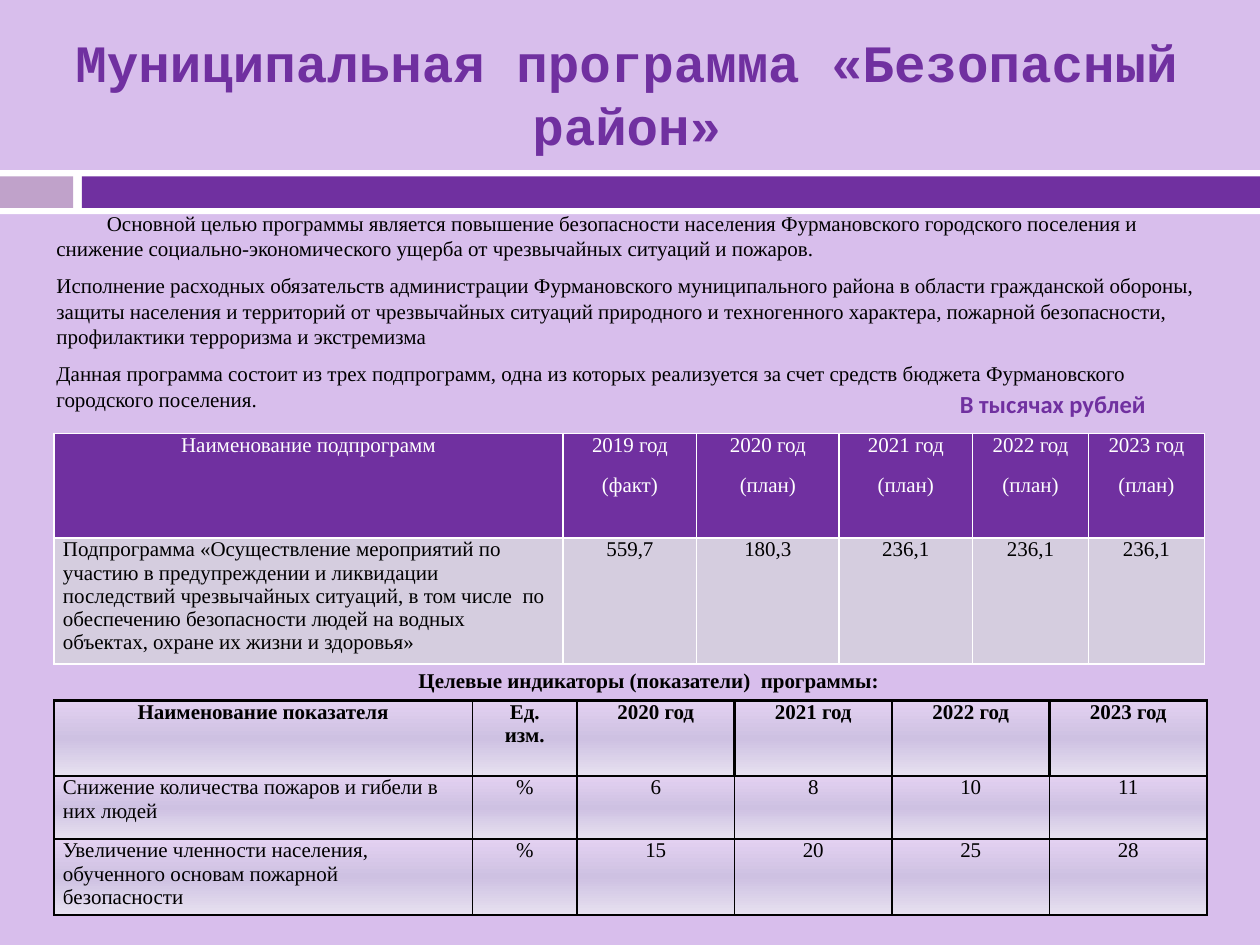
from lxml import etree
from pptx import Presentation
from pptx.dml.color import RGBColor
from pptx.enum.shapes import MSO_SHAPE
from pptx.enum.text import MSO_ANCHOR, PP_ALIGN
from pptx.util import Inches, Pt

RECT = MSO_SHAPE.RECTANGLE
LEFT, MID = PP_ALIGN.LEFT, PP_ALIGN.CENTER
TOP, CENTER = MSO_ANCHOR.TOP, MSO_ANCHOR.MIDDLE
NS = "http://schemas.openxmlformats.org/drawingml/2006/main"
SERIF = "Times New Roman"
PURPLE, WHITE, BLACK = "7030A0", "FFFFFF", "000000"
EDGE, SPAN = 0.43, 9.13

# Content
TITLE = ["Муниципальная программа «Безопасный район»"]
BODY = [
    "Основной целью программы является повышение безопасности населения Фурмановского "
    "городского поселения и снижение социально-экономического ущерба от чрезвычайных "
    "ситуаций и пожаров.",
    "Исполнение расходных обязательств администрации Фурмановского муниципального района "
    "в области гражданской обороны, защиты населения и территорий от чрезвычайных ситуаций "
    "природного и техногенного характера, пожарной безопасности, профилактики терроризма "
    "и экстремизма",
    "Данная программа состоит из трех подпрограмм, одна из которых реализуется за счет "
    "средств бюджета Фурмановского городского поселения.",
]
UNIT = ["В тысячах рублей"]
GOALS = ["Целевые индикаторы (показатели)  программы:"]
COSTS = [
    ["Наименование подпрограмм", "2019 год\n(факт)", "2020 год\n(план)",
     "2021 год\n(план)", "2022 год\n(план)", "2023 год\n(план)"],
    ["Подпрограмма «Осуществление мероприятий по участию в предупреждении и ликвидации "
     "последствий чрезвычайных ситуаций, в том числе  по обеспечению безопасности людей "
     "на водных объектах, охране их жизни и здоровья»",
     "559,7", "180,3", "236,1", "236,1", "236,1"],
]
TARGETS = [
    ["Наименование показателя", "Ед.\nизм.", "2020 год", "2021 год", "2022 год", "2023 год"],
    ["Снижение количества пожаров и гибели в них людей", "%", "6", "8", "10", "11"],
    ["Увеличение членности населения, обученного основам пожарной безопасности",
     "%", "15", "20", "25", "28"],
]
BANDS = [(0, 1.35, 10, 0.35, WHITE), (0, 1.4, 0.58, 0.25, "C0A2CA"),
         (0.65, 1.4, 9.35, 0.25, PURPLE)]
SHADE = [(0, "E3D1F1"), (50, "CEC1E2"), (100, "E7E1F0")]


def rgb(code):
    return RGBColor.from_string(code)


def write(frame, lines, size=12, font=SERIF, color=BLACK, bold=False,
          align=LEFT, before=0, after=0):
    frame.word_wrap = True
    for i, line in enumerate(lines):
        para = frame.paragraphs[0] if i == 0 else frame.add_paragraph()
        para.alignment = align
        para.space_before, para.space_after = Pt(before), Pt(after)
        run = para.add_run()
        run.text = line
        run.font.size, run.font.name, run.font.bold = Pt(size), font, bold
        run.font.color.rgb = rgb(color)


def label(spot, lines, anchor=TOP, **style):
    frame = slide.shapes.add_textbox(*map(Inches, spot)).text_frame
    frame.vertical_anchor = anchor
    write(frame, lines, **style)
    return frame


def node(base, tag, **attrs):
    return etree.SubElement(base, f"{{{NS}}}{tag}", attrs)


def paint(base, stops):
    """Fill with one colour, or with a vertical gradient of (percent, colour)."""
    if isinstance(stops, str):
        node(node(base, "solidFill"), "srgbClr", val=stops)
        return
    grad = node(base, "gradFill", rotWithShape="1")
    ramp = node(grad, "gsLst")
    for pos, code in stops:
        node(node(ramp, "gs", pos=str(pos * 1000)), "srgbClr", val=code)
    node(grad, "lin", ang="5400000", scaled="0")


def grid(top, cols, rows, data, look):
    """look(row, col) gives text style, fill, line colour and line widths."""
    table = slide.shapes.add_table(
        len(rows), len(cols), Inches(EDGE), Inches(top),
        Inches(SPAN), Inches(sum(rows))).table
    table.first_row = table.horz_banding = False
    for col, width in zip(table.columns, cols):
        col.width = Inches(width)
    for row, high in zip(table.rows, rows):
        row.height = Inches(high)
    for r, line in enumerate(data):
        for c, words in enumerate(line):
            cell = table.cell(r, c)
            cell.margin_left = cell.margin_right = Inches(0.07)
            cell.margin_top = cell.margin_bottom = 0
            style, fill, ink, widths = look(r, c)
            align = LEFT if r and c == 0 else MID
            write(cell.text_frame, words.split("\n"), align=align, **style)
            props = cell._tc.get_or_add_tcPr()
            for side, width in zip("LRTB", widths):
                paint(node(props, "ln" + side, w=str(Pt(width))), ink)
            paint(props, fill)


def cost_look(r, c):
    if r == 0:
        return dict(color=WHITE, after=10 if c else 0), PURPLE, WHITE, [1] * 4
    return {}, "D5CDDF", WHITE, [1] * 4


def target_look(r, c):
    head = r == 0
    left = 1.5 if c in (0, 2) or (head and c > 2) else 1
    right = 1.5 if c in (1, 5) or (head and c > 1) else 1
    widths = [left, right, 1.5 if head else 1, 1.5 if head else 1]
    return dict(bold=head), SHADE, BLACK, widths


deck = Presentation()
deck.slide_width, deck.slide_height = Inches(10), Inches(7.5)
slide = deck.slides.add_slide(deck.slide_layouts[6])
slide.background.fill.solid()
slide.background.fill.fore_color.rgb = rgb("D8BEEC")

# Divider bands
for *spot, code in BANDS:
    band = slide.shapes.add_shape(RECT, *map(Inches, spot))
    band.shadow.inherit = False
    band.fill.solid()
    band.fill.fore_color.rgb = rgb(code)
    band.line.fill.background()

# Title and description
label((0.31, 0.47, 9.33, 0.53), TITLE, anchor=CENTER, size=30,
      font="Courier New", color=PURPLE, bold=True, align=MID)
body = label((0.35, 1.62, 9.3, 1.92), BODY, before=7)
body.paragraphs[0]._p.get_or_add_pPr().set("indent", str(Inches(0.4)))

# Costs by year
label((7.52, 3.04, 2.27, 0.47), UNIT, size=14, font="Calibri", color=PURPLE, bold=True)
grid(3.44, [4.04, 1.06, 1.13, 1.06, 0.92, 0.92], [0.83, 0.93], COSTS, cost_look)

# Target indicators
label((0.51, 5.25, 9.28, 0.47), GOALS, bold=True, align=MID, before=7)
grid(5.56, [3.32, 0.83] + [1.25] * 4, [0.6, 0.5, 0.56], TARGETS, target_look)

deck.save("out.pptx")
